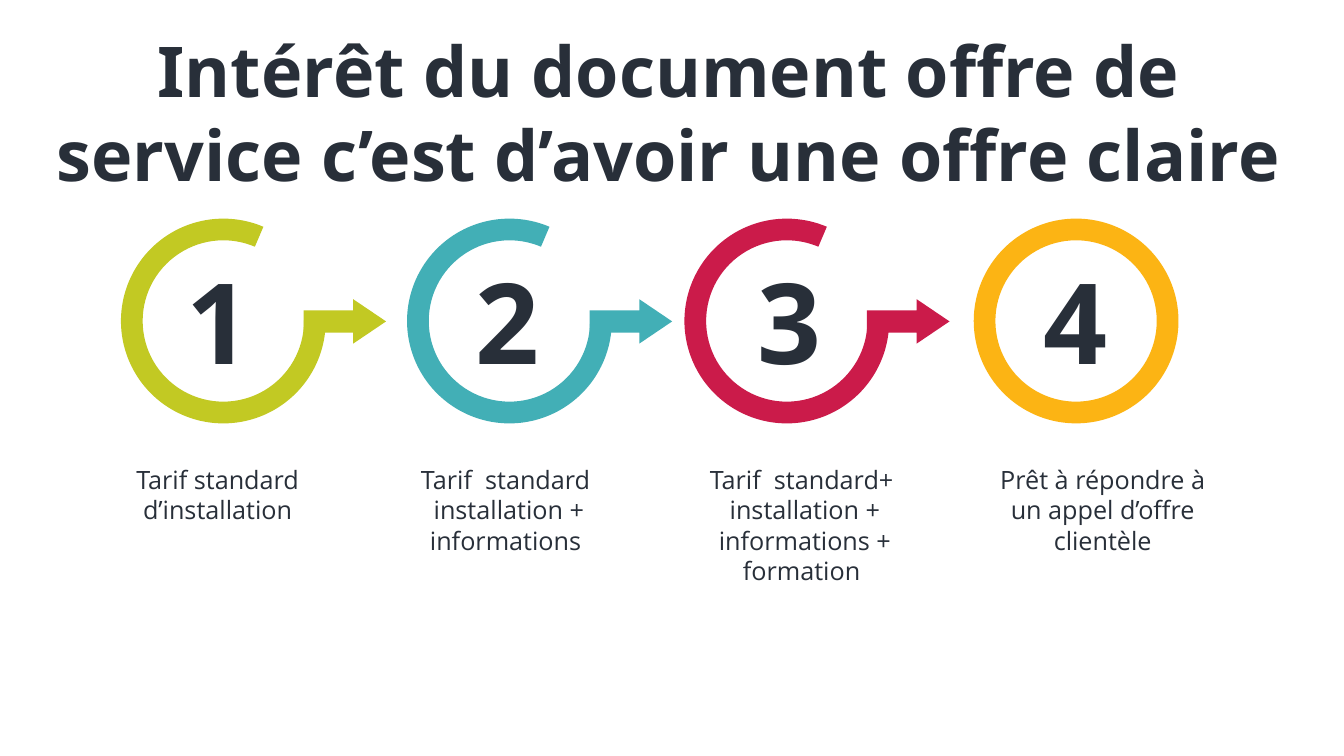
import pptx
import pptx.util
import pptx.dml.color
import pptx.enum.shapes
import pptx.enum.text

Cm = pptx.util.Cm
Kind = pptx.enum.shapes.MSO_SHAPE
hues = {"ink": "282F39", "lime": "C2C923", "teal": "42AFB6",
        "red": "CB1B4A", "gold": "FCB414"}


def paint(shape, hue):
    shape.shadow.inherit = False
    shape.fill.solid()
    shape.fill.fore_color.rgb = pptx.dml.color.RGBColor.from_string(hues[hue])
    shape.line.fill.background()


def write(box, lines, size, font="Open Sans", bold=False):
    frame = box.text_frame
    frame.text = "\n".join(lines)
    frame.word_wrap = True
    frame.auto_size = pptx.enum.text.MSO_AUTO_SIZE.NONE
    frame.vertical_anchor = pptx.enum.text.MSO_ANCHOR.TOP
    for para in frame.paragraphs:
        para.alignment = pptx.enum.text.PP_ALIGN.CENTER
        para.font.name = font
        para.font.size = pptx.util.Pt(size)
        para.font.bold = bold
        para.font.color.rgb = pptx.dml.color.RGBColor.from_string(hues["ink"])


deck = pptx.Presentation()
deck.slide_width, deck.slide_height = Cm(33.87), Cm(19.05)
slide = deck.slides.add_slide(deck.slide_layouts[5])

# Title
title = slide.shapes.title
title.left, title.top, title.width, title.height = Cm(1), Cm(0.56), Cm(31.7), Cm(4.52)
write(title, ["Intérêt du document offre de service c’est d’avoir une offre claire"],
      50, "Noto Sans", True)

# Steps: hue, ring left, number left, caption left and width, caption lines
steps = [
    ("lime", 3.05, 3.05, 2.41, 6.15, ["Tarif standard d’installation"]),
    ("teal", 10.26, 10.34, 9.32, 7.01,
     ["Tarif  standard ", "installation + informations "]),
    ("red", 17.25, 17.45, 16.64, 7.29,
     ["Tarif  standard+ ", "installation + informations + formation "]),
    ("gold", 24.54, 24.66, 24.92, 5.74,
     ["Prêt à répondre à un appel d’offre clientèle"]),
]
for num, (hue, left, mid, start, width, lines) in enumerate(steps, 1):
    last = num == len(steps)

    # Ring, open with an arrow except at the last step
    group = slide.shapes if last else slide.shapes.add_group_shape().shapes
    ring = group.add_shape(Kind.BLOCK_ARC, Cm(left), Cm(5.51), Cm(5.16), Cm(5.16))
    ring.adjustments[0] = 175.93 if last else 215.7
    ring.adjustments[1] = 175.81
    ring.adjustments[2] = 0.106
    paint(ring, hue)
    if not last:
        arrow = group.add_shape(Kind.RIGHT_ARROW, Cm(left + 4.6), Cm(7.54),
                                Cm(2.08), Cm(1.12))
        arrow.adjustments[1] = 0.74
        paint(arrow, hue)

    # Number and caption
    digit = slide.shapes.add_textbox(Cm(mid), Cm(6.25), Cm(4.9), Cm(3.68))
    write(digit, [str(num)], 80, bold=True)
    note = slide.shapes.add_textbox(Cm(start), Cm(11.58), Cm(width), Cm(1.8))
    write(note, lines, 18)

deck.save("out.pptx")
